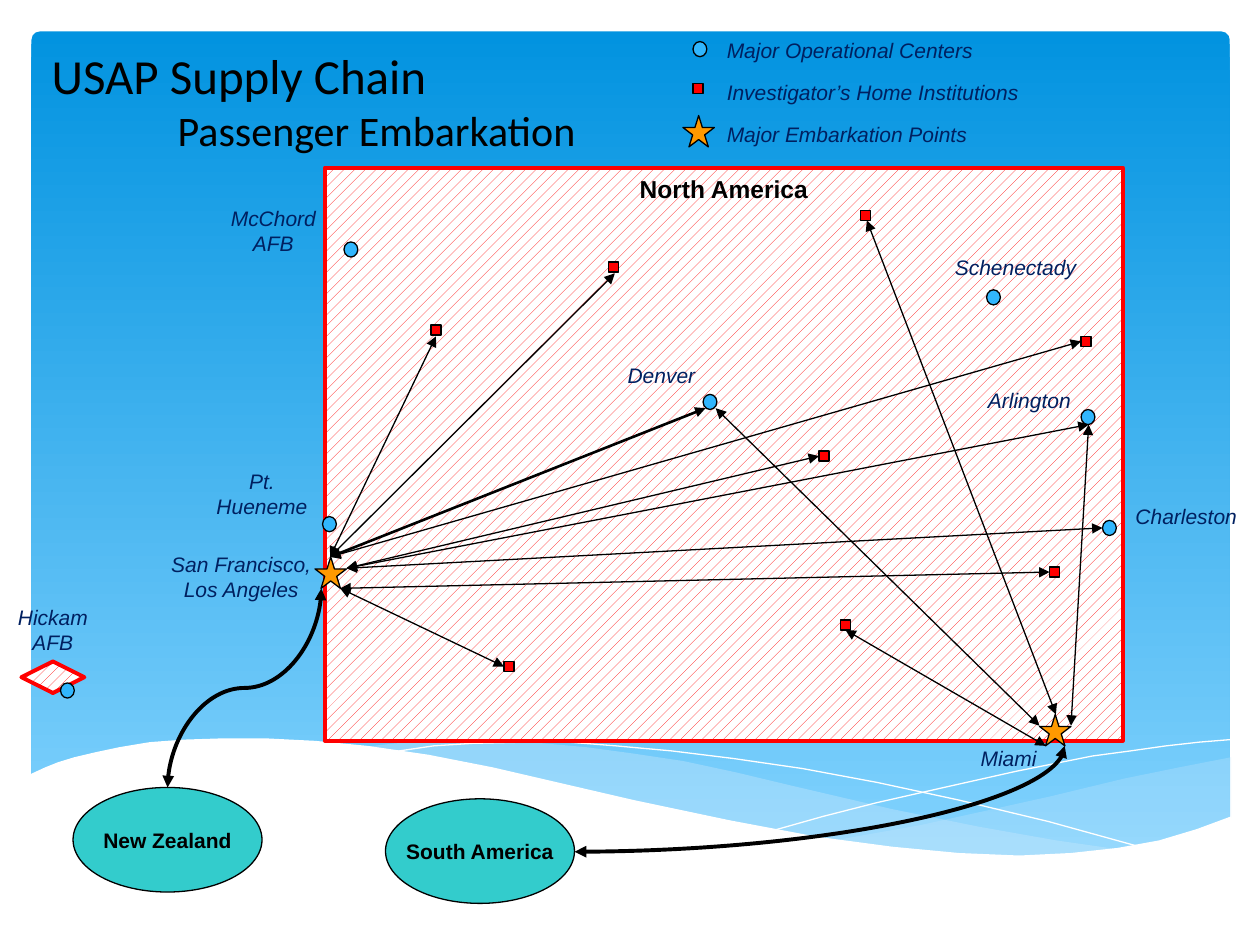
from dataclasses import dataclass

from lxml import etree
from pptx import Presentation
from pptx import util as u
from pptx.dml.color import RGBColor
from pptx.enum import dml, shapes, text
from pptx.oxml import ns

BLACK = RGBColor(0x00, 0x00, 0x00)
WHITE = RGBColor(0xFF, 0xFF, 0xFF)
RED = RGBColor(0xFF, 0x00, 0x00)
NAVY = RGBColor(0x00, 0x20, 0x60)
BLUE = RGBColor(0x31, 0xB6, 0xFD)
ORANGE = RGBColor(0xFF, 0x99, 0x00)
TEAL = RGBColor(0x33, 0xCC, 0xCC)
PALE = RGBColor(0xC6, 0xE7, 0xFC)
SKY_TOP = RGBColor(0x02, 0x93, 0xE0)
SKY_BOTTOM = RGBColor(0x83, 0xD3, 0xFE)
CM_PER_UNIT = 2.54
KIND = shapes.MSO_SHAPE
LEFT, CENTER = text.PP_ALIGN.LEFT, text.PP_ALIGN.CENTER


@dataclass(frozen=True)
class Marker:
    kind: KIND
    width: float
    height: float
    fill: RGBColor


@dataclass(frozen=True)
class Label:
    words: str
    x: float
    y: float
    width: float = 1
    height: float = 0.3
    align: text.PP_ALIGN = CENTER
    wrap: bool = True


@dataclass(frozen=True)
class Route:
    start: tuple
    end: tuple
    weight: float = 0.75


@dataclass(frozen=True)
class Wave:
    points: tuple
    fill: RGBColor = None
    opacity: int = 100


CENTRE = Marker(KIND.OVAL, 0.11, 0.12, BLUE)
INSTITUTION = Marker(KIND.RECTANGLE, 0.08, 0.08, RED)
EMBARKATION = Marker(KIND.STAR_5_POINT, 0.25, 0.25, ORANGE)

WAVES = [
    Wave(((9.77, 6.01), (9.36, 6.09), (8.92, 6.18), (8.34, 6.32), (7.8, 6.44),
          (7.3, 6.55), (6.62, 6.67), (7.06, 6.73), (7.46, 6.77), (7.82, 6.79),
          (8.25, 6.79), (8.64, 6.77), (8.98, 6.72), (9.29, 6.65), (9.51, 6.59),
          (9.77, 6.49)), PALE, 29),
    Wave(((8.94, 6.75), (8.38, 6.67), (7.76, 6.56), (7.07, 6.42), (6.3, 6.24),
          (5.84, 6.13), (5.42, 6.04), (5.02, 5.98), (4.65, 5.93), (4.2, 5.89),
          (3.8, 5.87), (3.45, 5.88), (3.14, 5.9), (2.87, 5.93), (3.23, 5.98),
          (3.63, 6.04), (4.05, 6.13), (4.5, 6.24), (5.3, 6.42), (5.85, 6.54),
          (6.35, 6.63), (6.81, 6.7), (7.23, 6.76), (7.62, 6.79), (7.97, 6.8),
          (8.39, 6.8), (8.68, 6.78)), PALE, 40),
    Wave(((3.1, 5.97), (3.44, 5.92), (3.75, 5.9), (4.17, 5.89), (4.51, 5.89),
          (4.89, 5.92), (5.33, 5.96), (5.82, 6.02), (6.37, 6.1), (6.96, 6.21),
          (7.61, 6.35), (8.32, 6.52), (9.08, 6.73))),
    Wave(((6.14, 6.59), (6.53, 6.48), (6.96, 6.37), (7.49, 6.25), (8.07, 6.12),
          (8.67, 6), (8.97, 5.96), (9.25, 5.92), (9.52, 5.89), (9.76, 5.87))),
    Wave(((9.77, 6.48), (9.5, 6.58), (9.2, 6.67), (8.87, 6.73), (8.5, 6.77),
          (8.09, 6.79), (7.61, 6.77), (7.08, 6.72), (6.48, 6.64), (5.79, 6.51),
          (5.03, 6.35), (4.47, 6.22), (3.91, 6.09), (3.4, 5.99), (2.92, 5.92),
          (2.5, 5.88), (2.11, 5.86), (1.77, 5.86), (1.46, 5.87), (1.19, 5.89),
          (0.95, 5.93), (0.76, 5.97), (0.59, 6.01), (0.46, 6.05), (0.36, 6.09),
          (0.23, 6.15), (0.23, 7.31), (9.77, 7.31)), WHITE),
]
SITES = {
    CENTRE: [(2.56, 4.1), (5.58, 3.13), (8.58, 3.25), (0.48, 5.42),
             (2.73, 1.92), (7.83, 2.3), (8.75, 4.13)],
    INSTITUTION: [(6.67, 4.92), (4.83, 2.08), (6.5, 3.58), (8.58, 2.67),
                  (3.42, 2.58), (4, 5.25), (6.83, 1.67), (8.33, 4.5)],
    EMBARKATION: [(8.25, 5.67), (2.5, 4.42)],
}
LABELS = [
    Label("Pt.\nHueneme", 1.58, 3.67, height=0.5),
    Label("Denver", 4.75, 2.83),
    Label("Arlington", 7.67, 3.03),
    Label("Hickam AFB", -0.08, 4.75, height=0.5),
    Label("McChord\nAFB", 1.67, 1.58, height=0.5),
    Label("Charleston", 8.83, 3.95, 1.17),
    Label("San Francisco, Los Angeles", 1.25, 4.33, 1.33, 0.5),
    Label("Miami", 7.42, 5.87, 1.17),
    Label("Schenectady", 7.48, 1.97, 1.17, align=LEFT, wrap=False),
]
WEST_TOP, WEST_SIDE, WEST_FOOT = (2.62, 4.42), (2.75, 4.51), (2.7, 4.67)
ARLINGTON = (8.64, 3.37)
ROUTES = [
    Route((3.46, 2.67), WEST_TOP),
    Route((4.88, 2.17), WEST_TOP),
    Route((4, 5.29), WEST_FOOT),
    Route((6.5, 3.62), WEST_SIDE),
    Route((6.71, 5), (8.3, 5.92)),
    Route((6.88, 1.75), (8.38, 5.67)),
    Route((8.33, 4.54), WEST_FOOT),
    Route((8.58, 2.71), WEST_TOP),
    Route((5.68, 3.24), (8.25, 5.76)),
    Route((8.75, 4.19), WEST_SIDE),
    Route((5.6, 3.24), WEST_TOP, 1.5),
    Route(ARLINGTON, WEST_SIDE),
    Route(ARLINGTON, (8.5, 5.76)),
]
LEGEND = [(CENTRE, 5.5, 0.08, "Major Operational Centers"),
          (INSTITUTION, 5.5, 0.08, "Investigator’s Home Institutions"),
          (EMBARKATION, 5.42, 0, "Major Embarkation Points")]


def cm(*values: float) -> list:
    return [u.Cm(v * CM_PER_UNIT) for v in values]


def add_element(parent, tag: str, **attributes: str) -> None:
    etree.SubElement(parent, ns.qn(tag), **attributes)


def add_figure(s, kind: KIND, x, y, width, height, line=BLACK, weight=0.75):
    sp = s.shapes.add_shape(kind, *cm(x, y, width, height))
    sp.shadow.inherit = False
    sp.line.color.rgb = line
    sp.line.width = u.Pt(weight)
    return sp


def add_marker(s, marker: Marker, x: float, y: float) -> None:
    sp = add_figure(s, marker.kind, x, y, marker.width, marker.height)
    sp.fill.solid()
    sp.fill.fore_color.rgb = marker.fill


def add_region(s, kind: KIND, x, y, width, height):
    sp = add_figure(s, kind, x, y, width, height, RED, 2.25)
    sp.fill.patterned()
    sp.fill.pattern = dml.MSO_PATTERN.PERCENT_20
    sp.fill.fore_color.rgb = RED
    sp.fill.back_color.rgb = WHITE
    return sp


def write(tf, words: str, size: float, color=BLACK, align=CENTER, **style) -> None:
    tf.text = words
    for p in tf.paragraphs:
        p.alignment = align
        for r in p.runs:
            r.font.name, r.font.size = "Arial", u.Pt(size)
            r.font.color.rgb = color
            r.font.bold, r.font.italic = style.get("bold"), style.get("italic")


def add_label(s, label: Label) -> None:
    tf = s.shapes.add_textbox(*cm(label.x, label.y, label.width, label.height)).text_frame
    tf.word_wrap = label.wrap
    tf.auto_size = text.MSO_AUTO_SIZE.SHAPE_TO_FIT_TEXT
    write(tf, label.words, 12, NAVY, label.align, italic=True)


def add_route(s, route: Route, kind=shapes.MSO_CONNECTOR.STRAIGHT):
    line = s.shapes.add_connector(kind, *cm(*route.start, *route.end))
    line.line.color.rgb = BLACK
    line.line.width = u.Pt(route.weight)
    for tag in ("a:headEnd", "a:tailEnd"):
        add_element(line.line._get_or_add_ln(), tag, type="triangle")
    add_element(line._element.spPr, "a:effectLst")
    return line


def add_curve(s, start: tuple, end: tuple, preset: str) -> None:
    mid_x, mid_y = (start[0] + end[0]) / 2, (start[1] + end[1]) / 2
    half_w, half_h = abs(end[1] - start[1]) / 2, abs(end[0] - start[0]) / 2
    turned = Route((mid_x - half_w, mid_y - half_h), (mid_x + half_w, mid_y + half_h), 2.25)
    spPr = add_route(s, turned, shapes.MSO_CONNECTOR.CURVE)._element.spPr
    spPr.find(ns.qn("a:xfrm")).set("rot", "5400000")
    spPr.find(ns.qn("a:prstGeom")).set("prst", preset)


def add_wave(s, wave: Wave) -> None:
    points = [cm(*point) for point in wave.points]
    builder = s.shapes.build_freeform(*points[0])
    builder.add_line_segments(points[1:], close=wave.fill is not None)
    sp = builder.convert_to_shape()
    sp.shadow.inherit = False
    if wave.fill is None:
        sp.fill.background()
        sp.line.color.rgb = WHITE
        sp.line.width = u.Pt(0)
        return
    sp.line.fill.background()
    sp.fill.solid()
    sp.fill.fore_color.rgb = wave.fill
    if wave.opacity < 100:
        color = sp._element.spPr.find(ns.qn("a:solidFill"))[0]
        add_element(color, "a:alpha", val=str(wave.opacity * 1000))


def add_sky(s) -> None:
    sky = add_figure(s, KIND.ROUNDED_RECTANGLE, 0.25, 0.25, 9.51, 6.6)
    sky.adjustments[0] = 0.01
    sky.line.fill.background()
    sky.fill.gradient()
    sky.fill.gradient_angle = 270
    for stop, color in zip(sky.fill.gradient_stops, (SKY_TOP, SKY_BOTTOM)):
        stop.color.rgb = color


def add_destination(s, name: str, x: float, y: float) -> None:
    sp = add_figure(s, KIND.OVAL, x, y, 1.5, 0.83)
    sp.fill.solid()
    sp.fill.fore_color.rgb = TEAL
    sp.text_frame.word_wrap = False
    sp.text_frame.vertical_anchor = text.MSO_ANCHOR.MIDDLE
    write(sp.text_frame, name, 12, bold=True)


def set_title(s) -> None:
    title = s.shapes.title
    title.left, title.top, title.width, title.height = cm(0.31, 0.31, 4.59, 0.98)
    tf = title.text_frame
    tf.text = "USAP Supply Chain\nPassenger Embarkation"
    tf.vertical_anchor = text.MSO_ANCHOR.TOP
    tf.auto_size = text.MSO_AUTO_SIZE.NONE
    for p, size, indent in zip(tf.paragraphs, (28, 24), (0, 1)):
        p.alignment = LEFT
        p._p.get_or_add_pPr().set("marL", str(cm(indent)[0]))
        r = p.runs[0]
        r.font.name, r.font.size = "Calibri", u.Pt(size)
        r.font.color.rgb = BLACK
    s.shapes._spTree.append(title._element)


def main() -> None:
    prs = Presentation()
    prs.slide_width, prs.slide_height = cm(10, 7.5)
    s = prs.slides.add_slide(prs.slide_layouts[5])
    add_sky(s)
    for wave in WAVES:
        add_wave(s, wave)
    continent = add_region(s, KIND.RECTANGLE, 2.58, 1.33, 6.33, 4.55)
    continent.text_frame.vertical_anchor = text.MSO_ANCHOR.TOP
    write(continent.text_frame, "North America", 14, bold=True)
    add_region(s, KIND.DIAMOND, 0.17, 5.25, 0.5, 0.25)
    for marker, places in SITES.items():
        for place in places:
            add_marker(s, marker, *place)
    for route in ROUTES:
        add_route(s, route)
    add_destination(s, "New Zealand", 0.58, 6.25)
    add_destination(s, "South America", 3.06, 6.34)
    add_curve(s, (2.55, 4.67), (1.33, 6.25), "curvedConnector3")
    add_curve(s, (8.45, 5.92), (4.56, 6.76), "curvedConnector2")
    for label in LABELS:
        add_label(s, label)
    for row, (marker, x, drop, words) in enumerate(LEGEND):
        y = 0.25 + row / 3
        add_marker(s, marker, x, y + drop)
        add_label(s, Label(words, 5.67, y, 2.67, align=LEFT))
    set_title(s)
    prs.save("out.pptx")


if __name__ == "__main__":
    main()
